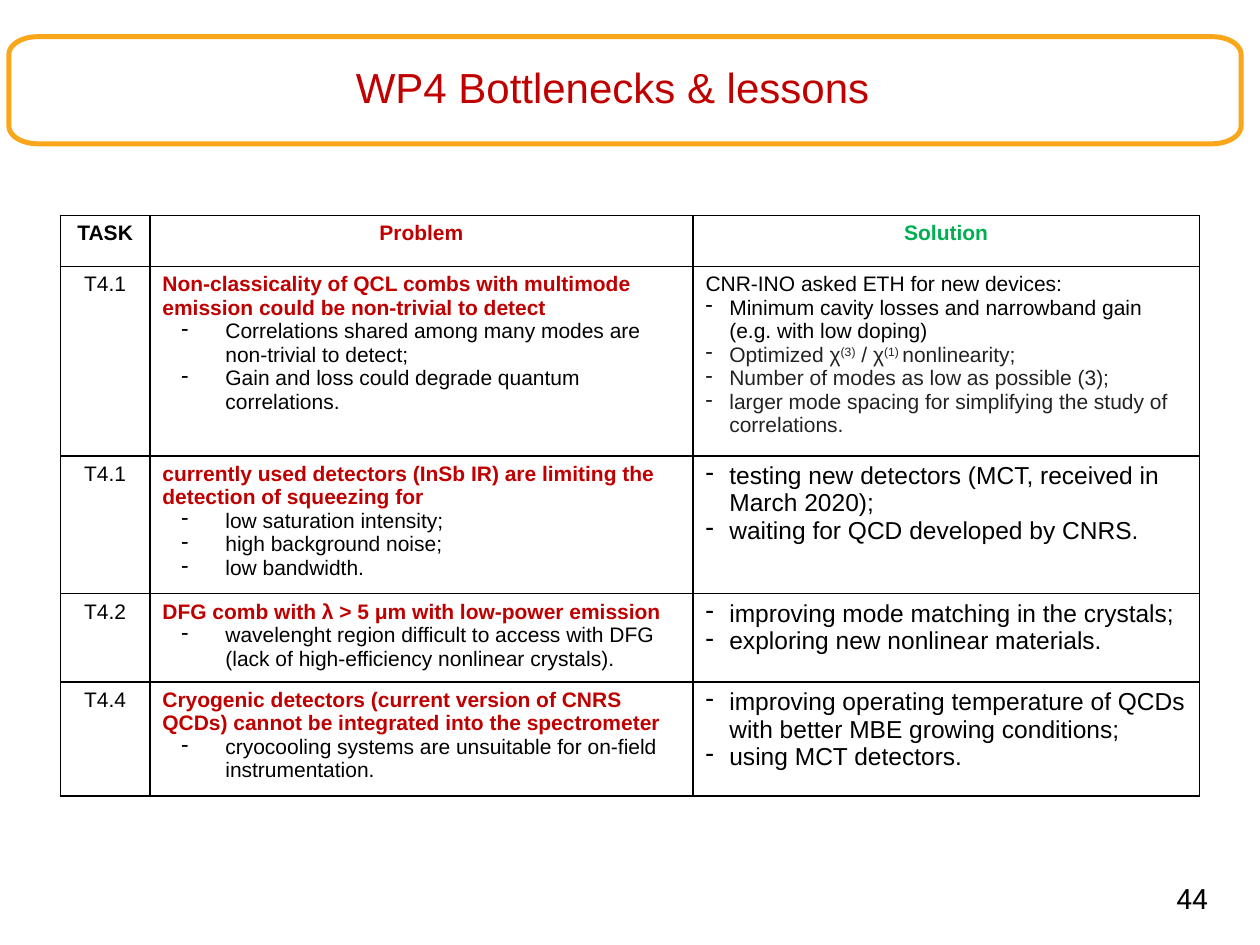
from dataclasses import dataclass
from math import cos, pi, sin

from lxml import etree
from pptx import Presentation
from pptx.dml.color import RGBColor
from pptx.enum.text import MSO_ANCHOR, MSO_AUTO_SIZE, PP_ALIGN
from pptx.oxml.ns import qn
from pptx.util import Cm, Pt

CENTER, RIGHT, MIDDLE = PP_ALIGN.CENTER, PP_ALIGN.RIGHT, MSO_ANCHOR.MIDDLE
FIT_NONE = MSO_AUTO_SIZE.NONE
TITLE_ONLY = 5


@dataclass(frozen=True)
class Theme:
    font: str = "Arial"
    number_font: str = "Roboto"
    red: str = "C00000"
    green: str = "00B050"
    black: str = "000000"
    gray: str = "222222"
    orange: str = "FAA61A"
    title: int = 24
    number: int = 16
    large: int = 14
    body: int = 12


T = Theme()


@dataclass(frozen=True)
class Item:
    """A dashed line of text; ^ switches superscript on and off."""
    text: str
    color: str = T.black


@dataclass(frozen=True)
class Task:
    name: str
    height: float
    problem: str
    causes: tuple[str, ...]
    solutions: tuple[Item, ...]
    lead: str = ""
    size: int = T.large


TASKS = (
    Task("T4.1", 3.82,
         "Non-classicality of QCL combs with multimode emission could be non-trivial to detect",
         ("Correlations shared among many modes are non-trivial to detect;",
          "Gain and loss could degrade quantum correlations."),
         (Item("Minimum cavity losses and narrowband gain (e.g. with low doping)"),
          Item("Optimized χ^(3)^ / χ^(1) ^nonlinearity;", T.gray),
          Item("Number of modes as low as possible (3);", T.gray),
          Item("larger mode spacing for simplifying the study of correlations.", T.gray)),
         lead="CNR-INO asked ETH for new devices:", size=T.body),
    Task("T4.1", 2.78,
         "currently used detectors (InSb IR) are limiting the detection of squeezing for",
         ("low saturation intensity;", "high background noise;", "low bandwidth."),
         (Item("testing new detectors (MCT, received in March 2020);"),
          Item("waiting for QCD developed by CNRS."))),
    Task("T4.2", 1.78,
         "DFG comb with λ > 5 μm with low-power emission",
         ("wavelenght region difficult to access with DFG "
          "(lack of high-efficiency nonlinear crystals).",),
         (Item("improving mode matching in the crystals;"),
          Item("exploring new nonlinear materials."))),
    Task("T4.4", 2.3,
         "Cryogenic detectors (current version of CNRS QCDs) "
         "cannot be integrated into the spectrometer",
         ("cryocooling systems are unsuitable for on-field instrumentation.",),
         (Item("improving operating temperature of QCDs with better MBE growing conditions;"),
          Item("using MCT detectors."))),
)
HEADINGS = (("TASK", T.black), ("Problem", T.red), ("Solution", T.green))
COLUMNS = (1.8, 10.95, 10.21)
HEADER_HEIGHT = 1.03
CAUSE_INDENT = (1.27, 0.89)
SOLUTION_INDENT = (0.48, 0.48)


def write(tf, text: str, *, first=False, size=T.body, color=T.black, bold=False,
          font=T.font, align=None, indent=None):
    """Write one paragraph; indent is (left margin, hanging) and adds a dash."""
    p = tf.paragraphs[0] if first else tf.add_paragraph()
    if indent:
        left, hanging = indent
        pPr = p._p.get_or_add_pPr()
        pPr.set("marL", str(Cm(left)))
        pPr.set("indent", str(-Cm(hanging)))
        etree.SubElement(pPr, qn("a:buChar"), char="-")
    if align is not None:
        p.alignment = align
    for i, part in enumerate(text.split("^")):
        r = p.add_run()
        r.text = part
        r.font.name, r.font.size, r.font.bold = font, Pt(size), bold
        r.font.color.rgb = RGBColor.from_string(color)
        if i % 2:
            r._r.get_or_add_rPr().set("baseline", "30000")
    return p


def place(s, left: float, top: float, width: float, height: float) -> None:
    s.left, s.top, s.width, s.height = Cm(left), Cm(top), Cm(width), Cm(height)


def add_frame(slide, left: float, top: float, width: float, height: float,
              rx: float, ry: float, steps: int = 12) -> None:
    """Outline with elliptical corners, walked clockwise from the left side."""
    right, bottom = left + width, top + height
    centers = ((left + rx, top + ry), (right - rx, top + ry),
               (right - rx, bottom - ry), (left + rx, bottom - ry))
    points = []
    for corner, (cx, cy) in enumerate(centers):
        for step in range(steps + 1):
            angle = pi + (corner + step / steps) * pi / 2
            points.append((Cm(cx + rx * cos(angle)), Cm(cy + ry * sin(angle))))
    builder = slide.shapes.build_freeform(*points[0])
    builder.add_line_segments(points[1:], close=True)
    s = builder.convert_to_shape()
    s.shadow.inherit = False
    s.fill.background()
    s.line.color.rgb = RGBColor.from_string(T.orange)
    s.line.width = Pt(2.83)


def style_cell(cell) -> None:
    """No fill, thin black border on all four sides."""
    cell.fill.background()
    tcPr = cell._tc.get_or_add_tcPr()
    for i, side in enumerate(("lnL", "lnR", "lnT", "lnB")):
        ln = etree.Element(qn(f"a:{side}"), w=str(Pt(1)))
        fill = etree.SubElement(ln, qn("a:solidFill"))
        etree.SubElement(fill, qn("a:srgbClr"), val=T.black)
        tcPr.insert(i, ln)


def fill_task(table, row: int, task: Task) -> None:
    name, problem, solution = (table.cell(row, c).text_frame for c in range(3))
    write(name, task.name, first=True, align=CENTER)
    write(problem, task.problem, first=True, color=T.red, bold=True)
    for cause in task.causes:
        write(problem, cause, indent=CAUSE_INDENT)
    if task.lead:
        write(solution, task.lead, first=True, size=task.size)
    for i, item in enumerate(task.solutions):
        write(solution, item.text, first=i == 0 and not task.lead, size=task.size,
              color=item.color, indent=SOLUTION_INDENT)


def add_task_table(slide, left: float, top: float) -> None:
    heights = (HEADER_HEIGHT, *(task.height for task in TASKS))
    table = slide.shapes.add_table(len(heights), len(COLUMNS), Cm(left), Cm(top),
                                   Cm(sum(COLUMNS)), Cm(sum(heights))).table
    table.first_row = table.horz_banding = False
    for column, width in zip(table.columns, COLUMNS):
        column.width = Cm(width)
    for row, height in zip(table.rows, heights):
        row.height = Cm(height)
    for cell in table.iter_cells():
        style_cell(cell)
    for c, (text, color) in enumerate(HEADINGS):
        write(table.cell(0, c).text_frame, text, first=True, color=color,
              bold=True, align=CENTER)
    for row, task in enumerate(TASKS, start=1):
        fill_task(table, row, task)


def main() -> None:
    prs = Presentation()
    prs.slide_width, prs.slide_height = Cm(25.4), Cm(19.05)
    slide = prs.slides.add_slide(prs.slide_layouts[TITLE_ONLY])

    # Title and its frame
    add_frame(slide, 0.18, 0.74, 24.84, 2.16, rx=0.58, ry=0.36)
    title = slide.shapes.title
    place(title, 4.45, 1.35, 15.8, 0.91)
    tf = title.text_frame
    tf.margin_left = tf.margin_right = tf.margin_top = tf.margin_bottom = 0
    tf.vertical_anchor, tf.auto_size, tf.word_wrap = MIDDLE, FIT_NONE, True
    p = write(tf, "WP4 Bottlenecks & lessons", first=True, size=T.title,
              color=T.red, align=CENTER)
    p.line_spacing = 0.9

    # Tasks with problems and solutions
    add_task_table(slide, 1.22, 4.34)

    # Page number
    number = slide.shapes.add_textbox(Cm(23.57), Cm(17.65), Cm(0.91), Cm(0.86))
    tf = number.text_frame
    tf.margin_left = tf.margin_right = tf.margin_top = tf.margin_bottom = Cm(0.13)
    tf.word_wrap = False
    write(tf, "44", first=True, size=T.number, font=T.number_font, align=RIGHT)

    prs.save("out.pptx")


if __name__ == "__main__":
    main()
